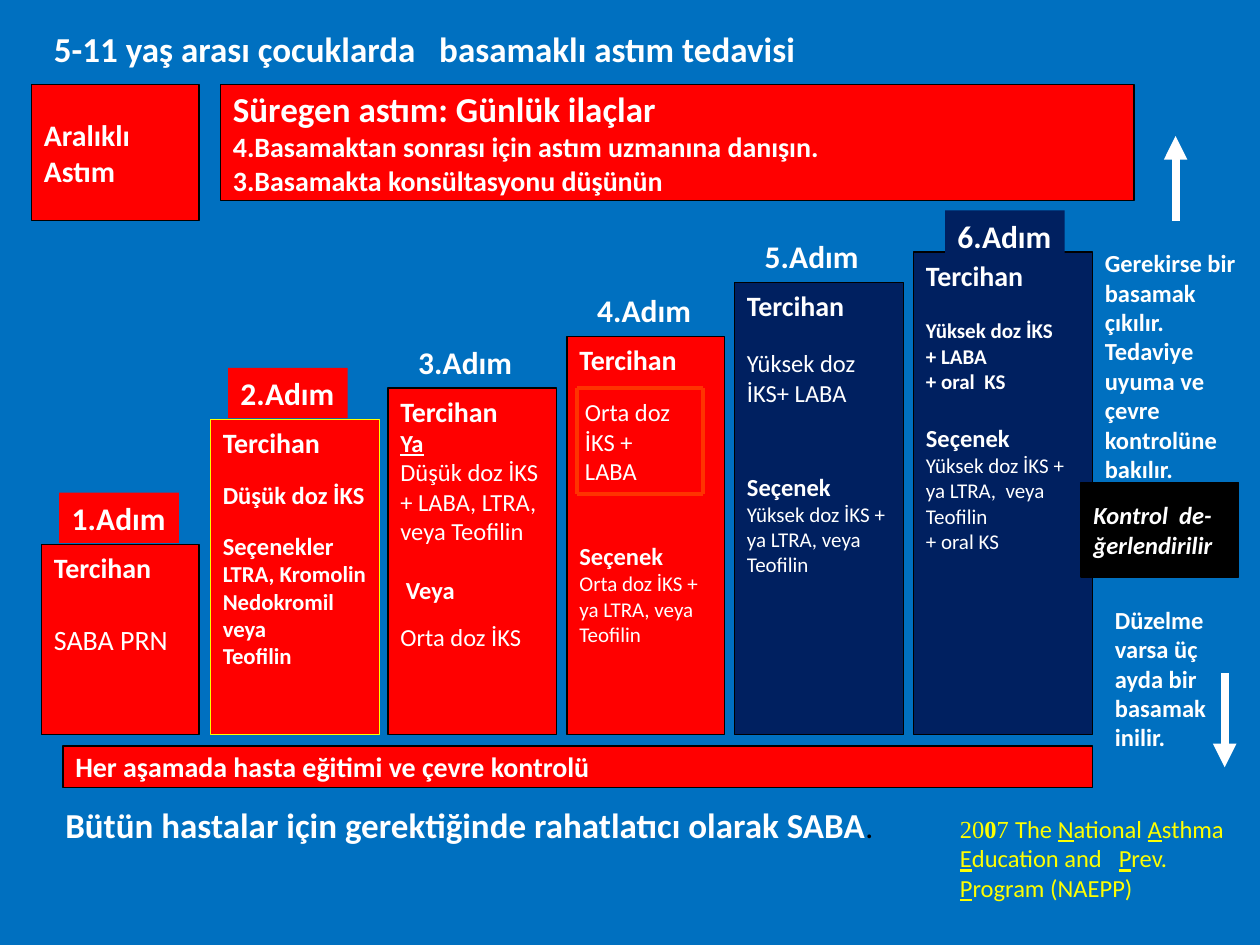
from pptx import Presentation
from pptx.dml.color import RGBColor
from pptx.enum.shapes import MSO_CONNECTOR, MSO_SHAPE
from pptx.enum.text import MSO_ANCHOR
from pptx.oxml.ns import qn
from pptx.util import Inches, Pt

RECT, STRAIGHT = MSO_SHAPE.RECTANGLE, MSO_CONNECTOR.STRAIGHT
TOP, MIDDLE = MSO_ANCHOR.TOP, MSO_ANCHOR.MIDDLE


class Theme:
    font, source_font = "Calibri", "Times New Roman"
    back, red, navy = "0070C0", "FF0000", "002060"
    white, black, yellow, orange = "FFFFFF", "000000", "FFFF00", "FF3300"
    title, label, head, body, small = 20, 18, 16, 14, 12


T = Theme
BASE = 5.83           # common foot of all steps
LABEL_W, LABEL_H = 0.95, 0.4

# A paragraph is (text, size, style letters b/i/u, space before in points)
PREFERRED = ("Tercihan", T.head, "b", 0)
OPTION = "Seçenek"

STEPS = [
    dict(x=0.33, top=4.32, w=1.25, fill=T.red, label_fill=T.red, paras=[
        PREFERRED, ("SABA PRN", T.head, "", 22)]),
    dict(x=1.67, top=3.33, w=1.34, fill=T.red, label_fill=T.red, line=T.yellow, paras=[
        PREFERRED,
        ("Düşük doz İKS", T.body, "b", 12),
        ("Seçenekler", T.body, "b", 12),
        ("LTRA, Kromolin", 13, "b", 0),
        ("Nedokromil veya", 13, "b", 0),
        ("Teofilin", 13, "b", 0)]),
    dict(x=3.08, top=3.08, w=1.34, fill=T.red, paras=[
        PREFERRED,
        ("Ya", T.body, "bu", 0),
        ("Düşük doz İKS + LABA, LTRA, veya Teofilin", T.body, "", 0),
        (" Veya", T.body, "b", 17),
        ("Orta doz İKS", T.body, "", 10)]),
    dict(x=4.5, top=2.67, w=1.25, fill=T.red, paras=[
        PREFERRED,
        (" Orta doz", T.body, "", 12),
        (" İKS +", T.body, "", 0),
        (" LABA", T.body, "", 0),
        (OPTION, T.body, "b", 32),
        ("Orta doz İKS + ya LTRA, veya", T.small, "", 0),
        ("Teofilin", T.small, "", 0)]),
    dict(x=5.83, top=2.24, w=1.34, fill=T.navy, paras=[
        PREFERRED,
        ("Yüksek doz İKS+ LABA", T.body, "", 15),
        (OPTION, T.body, "b", 37),
        ("Yüksek doz İKS + ya LTRA, veya", T.small, "", 0),
        ("Teofilin", T.small, "", 0)]),
    dict(x=7.25, top=2, w=1.42, fill=T.navy, label_fill=T.navy, label_at=(0.25, 0.33), paras=[
        PREFERRED,
        ("Yüksek doz İKS", T.small, "b", 15),
        ("+ LABA", T.small, "b", 0),
        ("+ oral  KS", T.small, "b", 0),
        (OPTION, T.body, "b", 17),
        ("Yüksek doz İKS + ya LTRA,  veya Teofilin", T.small, "", 0),
        ("+ oral KS", T.small, "", 0)]),
]

BANNERS = [
    ((0.25, 0.67, 1.33, 1.08), T.red, [("Aralıklı", 17, "b", 0), ("Astım", 17, "b", 0)]),
    ((1.75, 0.67, 7.25, 0.92), T.red, [
        ("Süregen astım: Günlük ilaçlar", T.title, "b", 0),
        ("4.Basamaktan sonrası için astım uzmanına danışın.", T.head, "b", 0),
        ("3.Basamakta konsültasyonu düşünün", T.head, "b", 0)]),
    ((0.5, 5.92, 8.17, 0.33), T.red, [
        ("Her aşamada hasta eğitimi ve çevre kontrolü", T.head, "b", 0)]),
]
CONTROL = ((8.58, 3.83, 1.25, 0.75), T.black, [
    ("Kontrol  de-", T.body, "bi", 0), ("ğerlendirilir", T.body, "bi", 0)])

NOTES = [
    ((0.33, 0.17, 9.5, 0.44), "5-11 yaş arası çocuklarda   basamaklı astım tedavisi", T.title),
    ((8.67, 1.92, 1.33, 2.29), "Gerekirse bir basamak çıkılır.   Tedaviye uyuma ve "
                               "çevre kontrolüne bakılır.", T.body),
    ((8.75, 4.75, 1.08, 1.28), "Düzelme varsa üç ayda bir basamak inilir.", T.body),
]
RELIEVER = "Bütün hastalar için gerektiğinde rahatlatıcı olarak SABA"
SOURCE_YEAR = [("20", ""), ("0", "b"), ("7 ", "")]
SOURCE_NAME = [("The ", ""), ("N", "u"), ("ational ", ""), ("A", "u"), ("sthma ", ""),
               ("E", "u"), ("ducation and   ", ""), ("P", "u"), ("rev. ", ""),
               ("P", "u"), ("rogram (NAEPP)", "")]

ARROWS = [(9.72, 5.34, 9.72, 6.09), (9.33, 1.75, 9.33, 1.08)]
FRAME = (4.58, 3.08, 5.58, 3.92)      # left, top, right, bottom


def rgb(value):
    return RGBColor.from_string(value)


def set_font(font, size, style="", color=T.white, name=T.font):
    font.size, font.name = Pt(size), name
    font.color.rgb = rgb(color)
    font.bold, font.italic = "b" in style, "i" in style
    font.underline = "u" in style


def write(s, paras, anchor=TOP, wrap=True):
    tf = s.text_frame
    tf.word_wrap, tf.vertical_anchor = wrap, anchor
    for i, (text, size, style, before) in enumerate(paras):
        p = tf.add_paragraph() if i else tf.paragraphs[0]
        p.alignment = 1
        p.space_before = Pt(before)
        p.add_run().text = text
        set_font(p.font, size, style)
    return tf


def add_box(slide, at, fill, paras, line=T.black, width=0.75, anchor=MIDDLE, wrap=True):
    s = slide.shapes.add_shape(RECT, *map(Inches, at))
    s.shadow.inherit = False
    s.fill.solid()
    s.fill.fore_color.rgb = rgb(fill)
    if line:
        s.line.color.rgb = rgb(line)
        s.line.width = Pt(width)
    else:
        s.line.fill.background()
    write(s, paras, anchor, wrap)


def add_text(slide, at, paras, wrap=True):
    return write(slide.shapes.add_textbox(*map(Inches, at)), paras, wrap=wrap)


def add_line(slide, ends, color, width, arrow=False):
    c = slide.shapes.add_connector(STRAIGHT, *map(Inches, ends))
    c.line.color.rgb = rgb(color)
    c.line.width = Pt(width)
    if arrow:
        ln = c.line._get_or_add_ln()
        ln.append(ln.makeelement(qn("a:tailEnd"), {"type": "triangle"}))
    sp_pr = c._element.spPr
    sp_pr.append(sp_pr.makeelement(qn("a:effectLst"), {}))


def add_step(slide, number, step):
    x, top = step["x"], step["top"]
    add_box(slide, (x, top, step["w"], BASE - top), step["fill"], step["paras"],
            step.get("line", T.black), anchor=TOP)
    dx, rise = step.get("label_at", (0.14, 0.41))
    at = (x + dx, top - rise, LABEL_W, LABEL_H)
    paras = [(f"{number}.Adım", T.label, "b", 0)]
    if "label_fill" in step:
        add_box(slide, at, step["label_fill"], paras, line=None, anchor=TOP, wrap=False)
    else:
        add_text(slide, at, paras, wrap=False)


def main():
    prs = Presentation()
    prs.slide_width, prs.slide_height = Inches(10), Inches(7.5)
    slide = prs.slides.add_slide(prs.slide_layouts[6])
    slide.background.fill.solid()
    slide.background.fill.fore_color.rgb = rgb(T.back)

    for at, fill, paras in BANNERS:
        add_box(slide, at, fill, paras)
    for at, text, size in NOTES:
        add_text(slide, at, [(text, size, "b", 0)])
    tf = add_text(slide, (0.42, 6.33, 7.49, 0.44), [(RELIEVER, T.title, "b", 0)])
    r = tf.paragraphs[0].add_run()
    r.text = "."
    set_font(r.font, T.label, color=T.black)

    for ends in ARROWS:
        add_line(slide, ends, T.white, 4.5, arrow=True)
    for number, step in enumerate(STEPS, 1):
        add_step(slide, number, step)
    add_box(slide, *CONTROL, width=1)

    left, top, right, bottom = FRAME
    for y in (top, bottom):
        add_line(slide, (left, y, right, y), T.orange, 2.25)
    for x in (right, left):
        add_line(slide, (x, top, x, bottom), T.orange, 2.25)

    p = add_text(slide, (7.52, 6.41, 2.3, 0.81), []).paragraphs[0]
    for name, runs in ((T.source_font, SOURCE_YEAR), (T.font, SOURCE_NAME)):
        for text, style in runs:
            r = p.add_run()
            r.text = text
            set_font(r.font, T.body, style, T.yellow, name)
    prs.save("out.pptx")


if __name__ == "__main__":
    main()
